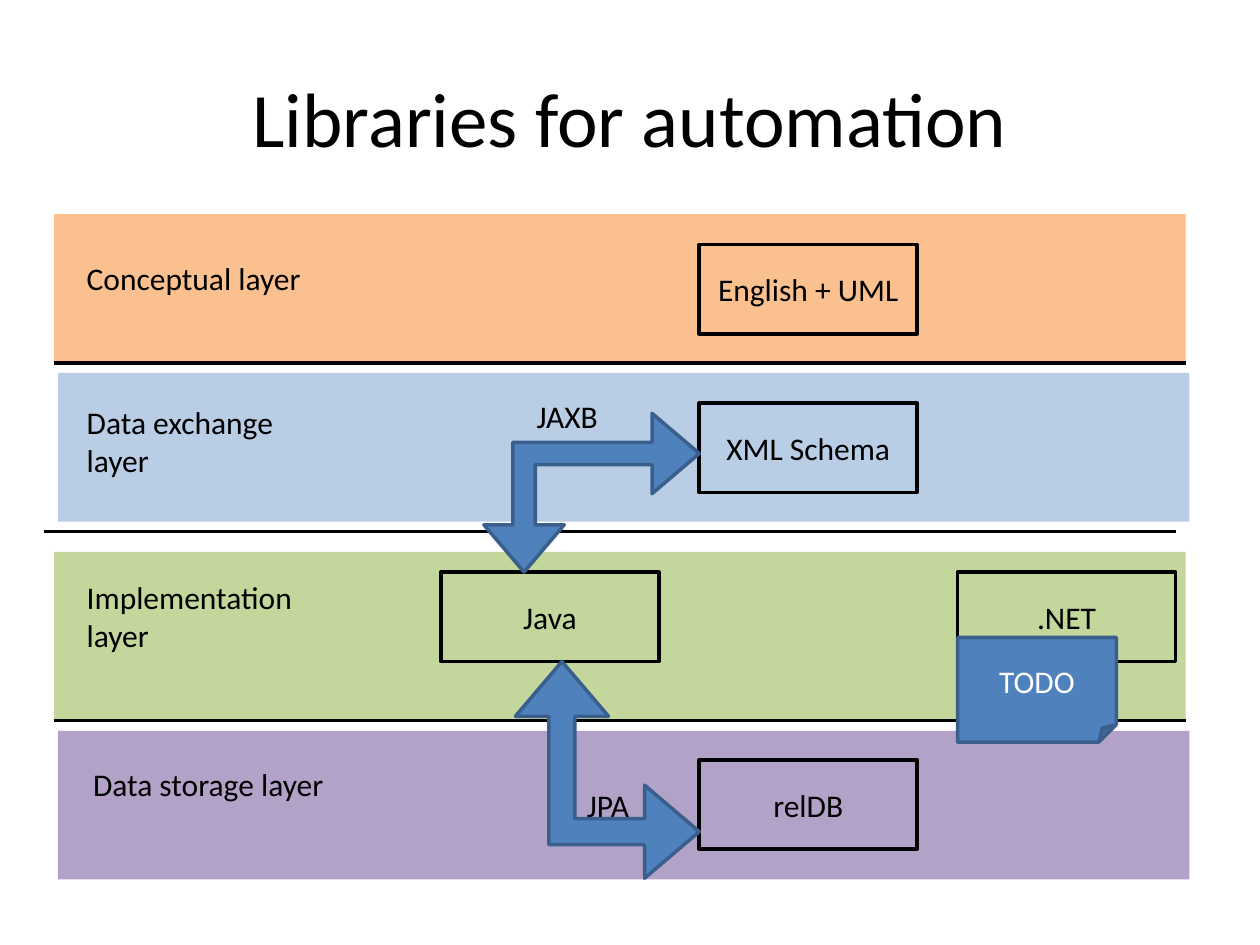
from pptx import Presentation
from pptx.dml.color import RGBColor
from pptx.enum.shapes import MSO_CONNECTOR, MSO_SHAPE
from pptx.enum.text import MSO_ANCHOR, PP_ALIGN
from pptx.oxml.ns import qn
from pptx.util import Inches, Pt
from lxml import etree

RECT = MSO_SHAPE.RECTANGLE
ARROW = MSO_SHAPE.LEFT_UP_ARROW
NOTE = MSO_SHAPE.FOLDED_CORNER
STRAIGHT = MSO_CONNECTOR.STRAIGHT
TOP, MIDDLE = MSO_ANCHOR.TOP, MSO_ANCHOR.MIDDLE
LEFT, CENTER = PP_ALIGN.LEFT, PP_ALIGN.CENTER

COLORS = {
    "black": "000000", "white": "FFFFFF",
    "conceptual": "FAC090", "exchange": "B9CDE5",
    "implementation": "C3D69B", "storage": "B3A2C7",
    "accent": "4F81BD", "accent_line": "3A5F8C",
}
BAND_W = 8.98
BOX_W, BOX_H = 1.73, 0.71
JAVA_X, CENTER_X, NET_X = 3.5, 5.55, 7.6

# band (left, top, height), colour, label, label offset and size,
# box offset from the band top, boxes (text, left), separator (left, top)
LAYERS = [
    ((0.43, 1.7, 1.18), "conceptual", "Conceptual layer",
     (0.16, 0.31, 2.13, 0.4), 0.24, [("English + UML", CENTER_X)], (0.43, 2.88)),
    ((0.46, 2.96, 1.18), "exchange", "Data exchange layer",
     (0.13, 0.19, 2.13, 0.71), 0.24, [("XML Schema", CENTER_X)], (0.35, 4.22)),
    ((0.43, 4.38, 1.34), "implementation", "Implementation layer",
     (0.16, 0.16, 2.36, 0.71), 0.16, [("Java", JAVA_X), (".NET", NET_X)], (0.43, 5.72)),
    ((0.46, 5.8, 1.18), "storage", "Data storage layer",
     (0.18, 0.22, 2.36, 0.4), 0.23, [("relDB", CENTER_X)], None),
]


def rgb(name):
    return RGBColor.from_string(COLORS[name])


def inches(box):
    return [Inches(v) for v in box]


def write(sp, text, size=18, color="black", align=LEFT, anchor=TOP):
    tf = sp.text_frame
    for key, value in {"word_wrap": True, "vertical_anchor": anchor}.items():
        setattr(tf, key, value)
    p = tf.paragraphs[0]
    p.alignment = align
    r = p.add_run()
    r.text = text
    for key, value in {"name": "Calibri", "size": Pt(size)}.items():
        setattr(r.font, key, value)
    r.font.color.rgb = rgb(color)


def add_text(s, box, text, **fmt):
    write(s.shapes.add_textbox(*inches(box)), text, **fmt)


def add_shape(s, kind, box, fill=None, line=None):
    sp = s.shapes.add_shape(kind, *inches(box))
    sp.shadow.inherit = False
    if fill:
        sp.fill.solid()
        sp.fill.fore_color.rgb = rgb(fill)
    else:
        sp.fill.background()
    if line:
        sp.line.color.rgb = rgb(line)
        sp.line.width = Pt(2)
    else:
        sp.line.fill.background()
    return sp


def add_separator(s, left, top):
    line = s.shapes.add_connector(STRAIGHT, *inches((left, top, left + BAND_W, top)))
    line.line.color.rgb = rgb("black")
    line.line.width = Pt(2)
    etree.SubElement(line._element.spPr, qn("a:effectLst"))


def add_layer(s, band, color, label, label_box, box_dy, boxes, separator):
    left, top, height = band
    add_shape(s, RECT, (left, top, BAND_W, height), fill=color)
    dx, dy, w, h = label_box
    add_text(s, (left + dx, top + dy, w, h), label)
    for text, x in boxes:
        sp = add_shape(s, RECT, (x, top + box_dy, BOX_W, BOX_H), line="black")
        write(sp, text, align=CENTER, anchor=MIDDLE)
    if separator:
        add_separator(s, *separator)


def add_mapping_arrow(s, box, rotation):
    """Add a bent two-way arrow; box is its frame before rotation."""
    sp = add_shape(s, ARROW, box, "accent", "accent_line")
    sp.rotation = rotation
    for i, value in enumerate((0.141, 0.253, 0.298)):
        sp.adjustments[i] = value


def add_note(s, box, text):
    sp = add_shape(s, NOTE, box, "accent", "accent_line")
    write(sp, text, color="white", align=CENTER, anchor=MIDDLE)


def main():
    prs = Presentation()
    prs.slide_width, prs.slide_height = Inches(10), Inches(7.5)
    s = prs.slides.add_slide(prs.slide_layouts[6])
    add_text(s, (0.5, 0.3, 9, 1.25), "Libraries for automation",
             size=44, align=CENTER, anchor=MIDDLE)
    for layer in LAYERS:
        add_layer(s, *layer)
    add_text(s, (4.56, 6.19, 0.79, 0.4), "JPA")
    add_mapping_arrow(s, (3.96, 5.38, 1.72, 1.46), 90)
    add_mapping_arrow(s, (3.84, 3.28, 1.71, 1.26), 180)
    add_text(s, (4.16, 3.1, 0.79, 0.4), "JAXB")
    add_note(s, (NET_X, 5.06, 1.26, 0.83), "TODO")
    prs.save("out.pptx")


if __name__ == "__main__":
    main()
